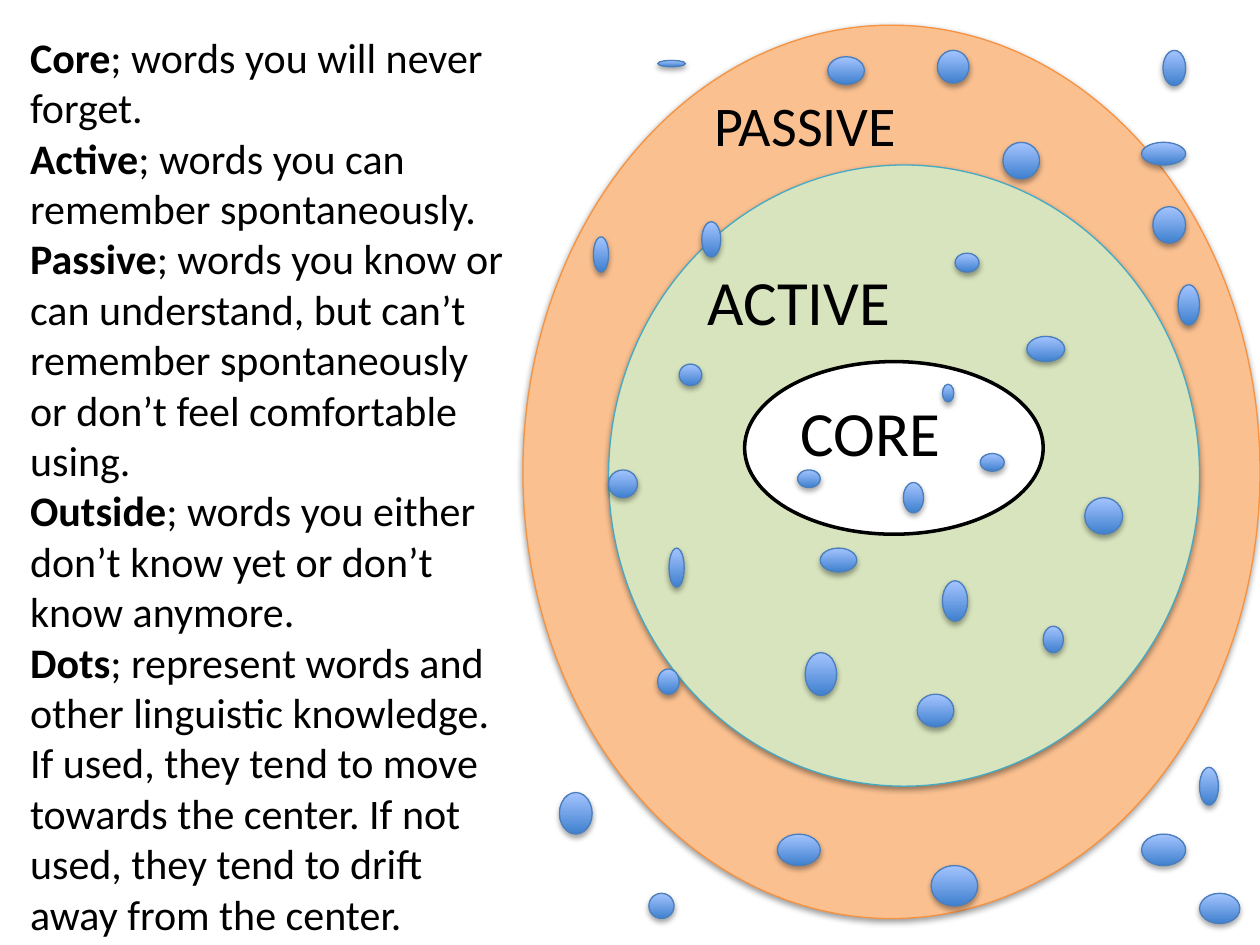
"""Build a slide of nested vocabulary zones with word dots and a written key."""
from dataclasses import dataclass
from typing import NamedTuple, Optional

from lxml import etree
from pptx import Presentation
from pptx import util as u
from pptx.dml.color import RGBColor
from pptx.enum import shapes, text
from pptx.oxml import ns

SCALE = 9144


@dataclass(frozen=True)
class Theme:
    font: str = "Calibri"
    ink: str = "000000"
    deep: str = "3F80CE"
    pale: str = "A4C4FF"
    edge: str = "4B7EBC"
    thin: float = 0.75
    key: int = 24
    label: int = 32
    zone: int = 36


class Box(NamedTuple):
    left: int
    top: int
    width: int
    height: int


class Shade(NamedTuple):
    alpha: int
    blur: float
    dist: float


class Zone(NamedTuple):
    box: Box
    fill: str
    line: str
    width: float
    shade: Optional[Shade]
    label: str


class Note(NamedTuple):
    term: str
    gloss: str


THEME = Theme()
ZONE_SHADE = Shade(38, 3.1, 1.6)
DOT_SHADE = Shade(35, 3.1, 1.8)

ZONES = [
    Zone(Box(415, 20, 585, 709), "FAC090", "F69240", THEME.thin, ZONE_SHADE, ""),
    Zone(Box(483, 131, 469, 493), "D7E4BD", "46AAC5", THEME.thin, ZONE_SHADE, "ACTIVE"),
    Zone(Box(591, 287, 237, 137), "FFFFFF", THEME.ink, 2, None, "CORE"),
]

DOTS = [
    Box(748, 305, 9, 14), Box(557, 176, 15, 28), Box(915, 164, 26, 29),
    Box(758, 201, 19, 15), Box(483, 373, 23, 22), Box(471, 188, 12, 28),
    Box(617, 662, 34, 25), Box(657, 45, 29, 22), Box(633, 373, 18, 14),
    Box(778, 360, 19, 14), Box(744, 40, 25, 26), Box(539, 289, 18, 17),
    Box(935, 226, 17, 32), Box(531, 435, 12, 31), Box(444, 629, 26, 33),
    Box(815, 267, 30, 20), Box(522, 531, 17, 20), Box(522, 48, 22, 5),
    Box(748, 461, 20, 32), Box(728, 551, 29, 26), Box(515, 709, 20, 20),
    Box(952, 709, 32, 24), Box(828, 497, 16, 21), Box(906, 113, 35, 18),
    Box(906, 662, 35, 25), Box(952, 609, 15, 30), Box(796, 113, 29, 29),
    Box(651, 435, 29, 19), Box(639, 518, 25, 34), Box(861, 395, 30, 29),
    Box(717, 383, 16, 24), Box(923, 40, 18, 28), Box(739, 687, 37, 32),
]

NOTES = [
    Note("Core", "; words you will never forget."),
    Note("Active", "; words you can remember spontaneously."),
    Note("Passive", "; words you know or can understand, but can’t remember "
         "spontaneously or don’t feel comfortable using."),
    Note("Outside", "; words you either don’t know yet or don’t know anymore."),
    Note("Dots", "; represent words and other linguistic knowledge. If used, they "
         "tend to move towards the center. If not used, they tend to drift away "
         "from the center."),
]


def emu(box: Box) -> list[int]:
    return [side * SCALE for side in box]


def rgb(code: str) -> RGBColor:
    return RGBColor.from_string(code)


def style(run, size: int, bold: bool = False) -> None:
    run.font.name = THEME.font
    run.font.size = u.Pt(size)
    run.font.bold = bold
    run.font.color.rgb = rgb(THEME.ink)


def cast(shape, shade: Shade) -> None:
    effects = shape.element.spPr.find(ns.qn("a:effectLst"))
    outer = etree.SubElement(
        effects, ns.qn("a:outerShdw"), blurRad=str(u.Pt(shade.blur)),
        dist=str(u.Pt(shade.dist)), dir="5400000", rotWithShape="0")
    tint = etree.SubElement(outer, ns.qn("a:srgbClr"), val=THEME.ink)
    etree.SubElement(tint, ns.qn("a:alpha"), val=str(shade.alpha * 1000))


def oval(slide, box: Box, line: str, width: float, shade: Optional[Shade]):
    shape = slide.shapes.add_shape(shapes.MSO_SHAPE.OVAL, *emu(box))
    shape.line.color.rgb = rgb(line)
    shape.line.width = u.Pt(width)
    shape.shadow.inherit = False
    if shade:
        cast(shape, shade)
    return shape


def draw_zone(slide, zone: Zone) -> None:
    shape = oval(slide, zone.box, zone.line, zone.width, zone.shade)
    shape.fill.solid()
    shape.fill.fore_color.rgb = rgb(zone.fill)
    if zone.label:
        frame = shape.text_frame
        frame.text = zone.label
        frame.vertical_anchor = text.MSO_ANCHOR.TOP
        frame.paragraphs[0].alignment = text.PP_ALIGN.LEFT
        style(frame.paragraphs[0].runs[0], THEME.zone)


def draw_dot(slide, box: Box) -> None:
    fill = oval(slide, box, THEME.edge, THEME.thin, DOT_SHADE).fill
    fill.gradient()
    fill.gradient_angle = 90
    for stop, code in zip(fill.gradient_stops, (THEME.deep, THEME.pale)):
        stop.color.rgb = rgb(code)


def add_text(slide, box: Box, words: str):
    frame = slide.shapes.add_textbox(*emu(box)).text_frame
    frame.word_wrap = True
    frame.auto_size = text.MSO_AUTO_SIZE.SHAPE_TO_FIT_TEXT
    frame.text = words
    return frame


def draw_label(slide, box: Box, words: str) -> None:
    style(add_text(slide, box, words).paragraphs[0].runs[0], THEME.label)


def draw_key(slide, box: Box, notes: list[Note]) -> None:
    frame = add_text(slide, box, "\n".join(note.term for note in notes))
    for para, note in zip(frame.paragraphs, notes):
        style(para.runs[0], THEME.key, bold=True)
        run = para.add_run()
        run.text = note.gloss
        style(run, THEME.key)


def main() -> None:
    deck = Presentation()
    deck.slide_width, deck.slide_height = 1000 * SCALE, 750 * SCALE
    slide = deck.slides.add_slide(deck.slide_layouts[6])
    for zone in ZONES:
        draw_zone(slide, zone)
    draw_label(slide, Box(557, 67, 304, 64), "PASSIVE")
    for dot in DOTS:
        draw_dot(slide, dot)
    draw_key(slide, Box(14, 20, 401, 767), NOTES)
    deck.save("out.pptx")


if __name__ == "__main__":
    main()
